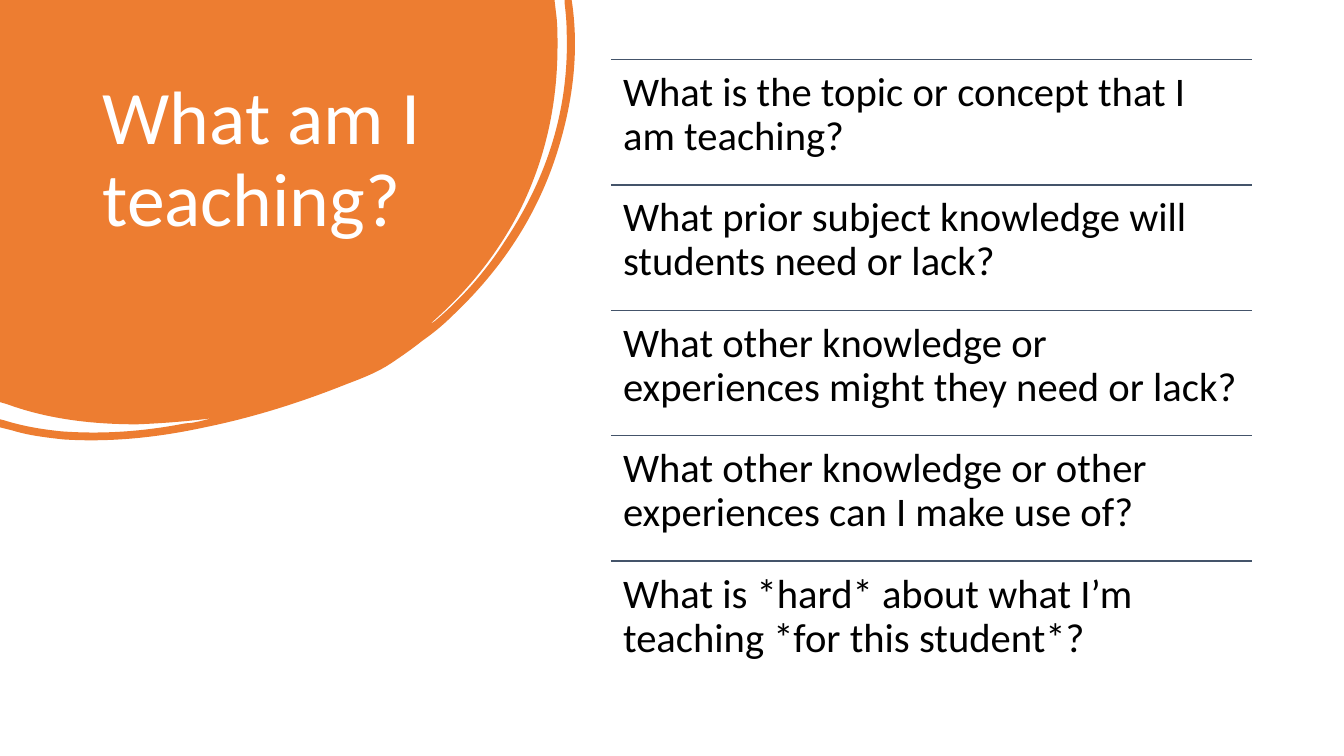
from lxml import etree
from pptx import Presentation
from pptx.dml.color import RGBColor
from pptx.enum.shapes import MSO_CONNECTOR as Connector
from pptx.enum.text import MSO_ANCHOR as Anchor, PP_ALIGN as Align
from pptx.oxml.ns import qn
from pptx.util import Inches, Pt

TITLE = "What am I teaching?"
QUESTIONS = [
    "What is the topic or concept that I am teaching?",
    "What prior subject knowledge will students need or lack?",
    "What other knowledge or experiences might they need or lack?",
    "What other knowledge or other experiences can I make use of?",
    "What is *hard* about what I’m teaching *for this student*?",
]
COLORS = {"blob": "ED7D31", "title": "FFFFFF", "question": "000000", "rule": "44546A"}
FONT = "Calibri"

# Outline in inches: two numbers draw a line, six draw a Bézier curve.
BLOB_SIZE = (5.71, 4.37)
BLOB_START = (0, 0)
BLOB = [
    (5.5, 0), (5.52, 0.17),
    (5.53, 0.26, 5.53, 0.36, 5.53, 0.45),
    (5.53, 1.01, 5.42, 1.54, 5.18, 2.04),
    (4.96, 2.49, 4.65, 2.88, 4.27, 3.21),
    (4.29, 3.21, 4.3, 3.19, 4.32, 3.18),
    (4.59, 2.95, 4.82, 2.69, 5.01, 2.39),
    (5.43, 1.76, 5.65, 1.07, 5.62, 0.3),
    (5.62, 0.21, 5.61, 0.12, 5.6, 0.03),
    (5.6, 0), (5.67, 0), (5.68, 0.07),
    (5.74, 0.54, 5.68, 1.02, 5.53, 1.5),
    (5.33, 2.14, 4.97, 2.68, 4.48, 3.14),
    (4.39, 3.23, 4.29, 3.31, 4.19, 3.38),
    (4.09, 3.46, 3.99, 3.53, 3.87, 3.61),
    (3.75, 3.69, 3.6, 3.75, 3.44, 3.81),
    (2.99, 3.99, 2.52, 4.14, 2.03, 4.24),
    (1.57, 4.34, 1.1, 4.39, 0.63, 4.36),
    (0.45, 4.34, 0.28, 4.32, 0.12, 4.27),
    (0, 4.24), (0, 4.16), (0.04, 4.17),
    (0.23, 4.23, 0.42, 4.26, 0.61, 4.28),
    (1.03, 4.31, 1.43, 4.28, 1.84, 4.2),
    (1.89, 4.2, 1.93, 4.19, 1.98, 4.18),
    (2.02, 4.17, 2.06, 4.16, 2.1, 4.15),
    (1.86, 4.18, 1.61, 4.2, 1.36, 4.21),
    (0.92, 4.21, 0.48, 4.16, 0.07, 4.01),
    (0, 3.99),
]
UNITS = 1000  # freeform units per inch

TITLE_BOX = (0.92, 0.74, 3.52, 2.22)
LIST_LEFT, LIST_TOP, LIST_WIDTH, LIST_BOTTOM = 6.06, 0.59, 6.36, 6.81
ROW_HEIGHT = (LIST_BOTTOM - LIST_TOP) / len(QUESTIONS)
MARGINS = ("margin_left", "margin_top", "margin_right", "margin_bottom")


def color(name):
    return RGBColor.from_string(COLORS[name])


def units(length):
    return round(length * UNITS)


def bend(blob):
    """Turn the straight sides that have control points into Bézier curves."""
    outline = blob._element.spPr.find(".//" + qn("a:path"))
    for side, segment in zip(outline.findall(qn("a:lnTo")), BLOB):
        if len(segment) == 6:
            curve = etree.Element(qn("a:cubicBezTo"))
            for x, y in zip(segment[::2], segment[1::2]):
                etree.SubElement(curve, qn("a:pt"), x=str(units(x)), y=str(units(y)))
            outline.replace(side, curve)
    blob.width, blob.height = map(Inches, BLOB_SIZE)
    for name, length in zip("wh", BLOB_SIZE):
        outline.set(name, str(units(length)))


def add_blob(shapes):
    builder = shapes.build_freeform(*BLOB_START, scale=Inches(1) / UNITS)
    builder.add_line_segments([tuple(map(units, segment[-2:])) for segment in BLOB],
                              close=True)
    blob = builder.convert_to_shape()
    bend(blob)
    blob.shadow.inherit = False
    blob.fill.solid()
    blob.fill.fore_color.rgb = color("blob")
    blob.line.fill.background()


def add_text(shapes, text, box, size, color_name, insets, space_after=0):
    frame = shapes.add_textbox(*map(Inches, box)).text_frame
    frame_format = {"word_wrap": True, "vertical_anchor": Anchor.TOP}
    frame_format.update(zip(MARGINS, map(Inches, insets)))
    paragraph = frame.paragraphs[0]
    run = paragraph.add_run()
    run.text = text
    run.font.color.rgb = color(color_name)
    paragraph_format = {"alignment": Align.LEFT, "line_spacing": 0.9,
                        "space_after": Pt(space_after)}
    font_format = {"name": FONT, "size": Pt(size)}
    for target, values in ((frame, frame_format), (paragraph, paragraph_format),
                           (run.font, font_format)):
        for name, value in values.items():
            setattr(target, name, value)


def add_rule(shapes, top):
    rule = shapes.add_connector(Connector.STRAIGHT, Inches(LIST_LEFT), Inches(top),
                                Inches(LIST_LEFT + LIST_WIDTH), Inches(top))
    rule.line.color.rgb = color("rule")
    rule.line.width = Pt(1)
    etree.SubElement(rule._element.spPr, qn("a:effectLst"))


def main():
    deck = Presentation()
    deck.slide_width, deck.slide_height = Inches(13.33), Inches(7.5)
    shapes = deck.slides.add_slide(deck.slide_layouts[6]).shapes

    add_blob(shapes)
    add_text(shapes, TITLE, TITLE_BOX, 54, "title", (0.1, 0.05, 0.1, 0.05))
    for row, question in enumerate(QUESTIONS):
        top = LIST_TOP + row * ROW_HEIGHT
        add_rule(shapes, top)
        add_text(shapes, question, (LIST_LEFT, top, LIST_WIDTH, ROW_HEIGHT),
                 29, "question", (0.12,) * 4, space_after=10)

    deck.save("out.pptx")


if __name__ == "__main__":
    main()
